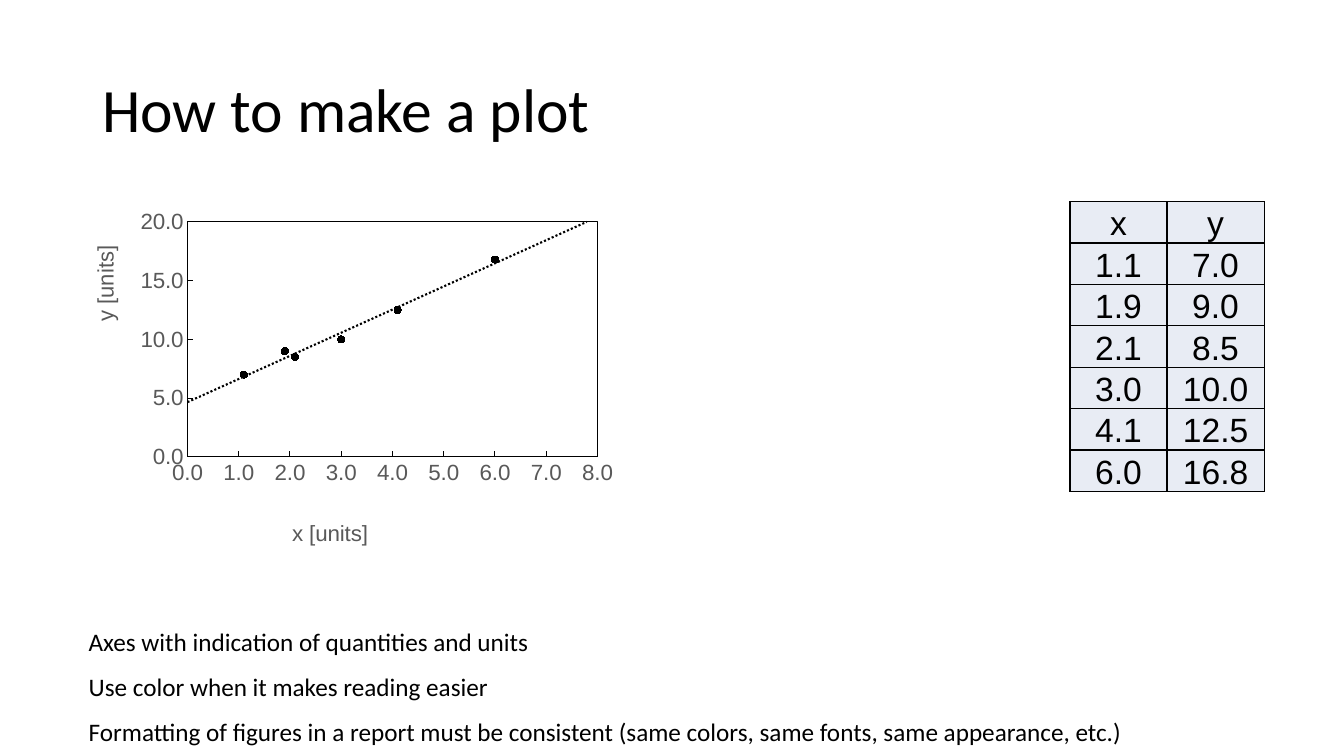
import pptx
import pptx.chart.data
import pptx.dml.color
import pptx.enum.chart
import pptx.enum.text
import pptx.oxml
import pptx.oxml.ns
import pptx.util

PX = 9525
COLORS = {"ink": "000000", "label": "595959", "cell": "E8ECF4"}
POINTS = [(1.1, 7.0), (1.9, 9.0), (2.1, 8.5), (3.0, 10.0), (4.1, 12.5), (6.0, 16.8)]
NOTES = [
    "Axes with indication of quantities and units",
    "Use color when it makes reading easier",
    "Formatting of figures in a report must be consistent "
    "(same colors, same fonts, same appearance, etc.)",
]


def color(name):
    return pptx.dml.color.RGBColor.from_string(COLORS[name])


def emu(box):
    return [length * PX for length in box]


def style(font, face, size, name="ink"):
    font.name = face
    font.size = pptx.util.Pt(size)
    font.bold = False
    font.color.rgb = color(name)


def node(tag, body):
    spaces = pptx.oxml.ns.nsdecls("a", "c")
    return pptx.oxml.parse_xml(f"<{tag} {spaces}>{body}</{tag}>")


def stroke(width, dash="solid"):
    return (f'<a:ln w="{int(width * 12700)}"><a:solidFill><a:srgbClr val="{COLORS["ink"]}"/>'
            f'</a:solidFill><a:prstDash val="{dash}"/></a:ln>')


def place(parent, index, **parts):
    for old in parent.findall(pptx.oxml.ns.qn("c:layout")):
        parent.remove(old)
    target = '<c:layoutTarget val="inner"/>' if "w" in parts else ""
    modes = "".join(f'<c:{key}Mode val="edge"/>' for key in "xy")
    sizes = "".join(f'<c:{key} val="{value}"/>' for key, value in parts.items())
    body = f"<c:manualLayout>{target}{modes}{sizes}</c:manualLayout>"
    parent.insert(index, node("c:layout", body))


def add_text(slide, box, lines, size, space, anchor):
    frame = slide.shapes.add_textbox(*emu(box)).text_frame
    frame.word_wrap = True
    frame.vertical_anchor = anchor
    for index, line in enumerate(lines):
        para = frame.paragraphs[0] if index == 0 else frame.add_paragraph()
        para.text = line
        para.line_spacing = space
        style(para.font, "Calibri", size)


def add_table(slide, box, rows):
    table = slide.shapes.add_table(len(rows), len(rows[0]), *emu(box)).table
    table.first_row = table.horz_banding = False
    for row, values in zip(table.rows, rows):
        row.height = box[3] * PX // len(rows)
        for cell, value in zip(row.cells, values):
            cell.margin_left = cell.margin_right = cell.margin_top = PX
            cell.margin_bottom = 0
            cell.vertical_anchor = pptx.enum.text.MSO_ANCHOR.BOTTOM
            cell.fill.solid()
            cell.fill.fore_color.rgb = color("cell")
            para = cell.text_frame.paragraphs[0]
            para.text = value
            para.alignment = pptx.enum.text.PP_ALIGN.CENTER
            style(para.font, "Arial", 24)
            props = cell._tc.get_or_add_tcPr()
            for index, side in enumerate("LRTB"):
                line = stroke(1).replace("a:ln", f"a:ln{side}")
                props.insert(index, node("a:box", line)[0])


def set_axis(axis, top, step, title, spot, turn):
    axis.minimum_scale, axis.maximum_scale, axis.major_unit = 0, top, step
    axis.has_major_gridlines = False
    axis.major_tick_mark = pptx.enum.chart.XL_TICK_MARK.INSIDE
    axis.minor_tick_mark = pptx.enum.chart.XL_TICK_MARK.NONE
    axis.tick_labels.number_format = "0.0"
    axis.tick_labels.number_format_is_linked = False
    style(axis.tick_labels.font, "Arial", 16, "label")
    axis.format.line.color.rgb = color("ink")
    axis.format.line.width = pptx.util.Pt(0.75)
    frame = axis.axis_title.text_frame
    frame.text = title
    style(frame.paragraphs[0].font, "Arial", 16, "label")
    frame._txBody.bodyPr.set("rot", str(turn * 60000))
    frame._txBody.bodyPr.set("vert", "horz")
    place(axis.axis_title._element, 1, x=spot[0], y=spot[1])


def add_plot(slide, box, points):
    data = pptx.chart.data.XyChartData(number_format="0.0")
    series = data.add_series("Series 1")
    for x, y in points:
        series.add_data_point(x, y)
    kind = pptx.enum.chart.XL_CHART_TYPE.XY_SCATTER
    chart = slide.shapes.add_chart(kind, *emu(box), data).chart
    chart.has_legend = chart.has_title = False
    style(chart.font, "Arial", 16)
    set_axis(chart.category_axis, 8, 1, "x [units]", (0.41, 0.91), 0)
    set_axis(chart.value_axis, 20, 5, "y [units]", (0.06, 0.12), -90)

    plot = chart.plots[0]
    plot.vary_by_categories = False
    dots = plot.series[0]
    dots.smooth = False
    dots.format.line.fill.background()
    dots.marker.style = pptx.enum.chart.XL_MARKER_STYLE.CIRCLE
    dots.marker.size = 5
    dots.marker.format.fill.solid()
    dots.marker.format.fill.fore_color.rgb = color("ink")
    dots.marker.format.line.color.rgb = color("ink")
    trend = node("c:trendline", f"<c:spPr>{stroke(1.5, 'sysDot')}</c:spPr>"
                 '<c:trendlineType val="linear"/><c:forward val="2"/><c:backward val="1.1"/>'
                 '<c:dispRSqr val="0"/><c:dispEq val="0"/>')
    dots._element.find(pptx.oxml.ns.qn("c:xVal")).addprevious(trend)

    area = plot._element.getparent()
    place(area, 0, x=0.235, y=0.059, w=0.714, h=0.682)
    for old in area.findall(pptx.oxml.ns.qn("c:spPr")):
        area.remove(old)
    area.append(node("c:spPr", f"<a:noFill/>{stroke(0.75)}"))


def main():
    deck = pptx.Presentation()
    deck.slide_width, deck.slide_height = emu((1280, 720))
    slide = deck.slides.add_slide(deck.slide_layouts[6])
    anchor = pptx.enum.text.MSO_ANCHOR
    add_text(slide, (88, 38, 1104, 139), ["How to make a plot"], 44, 0.9, anchor.MIDDLE)
    rows = [("x", "y")] + [(f"{x:.1f}", f"{y:.1f}") for x, y in POINTS]
    add_table(slide, (1019, 192, 185, 252), rows)
    add_text(slide, (75, 577, 1186, 136), NOTES, 18, 1.5, anchor.TOP)
    add_plot(slide, (50, 192, 547, 334), POINTS)
    deck.save("out.pptx")


if __name__ == "__main__":
    main()
